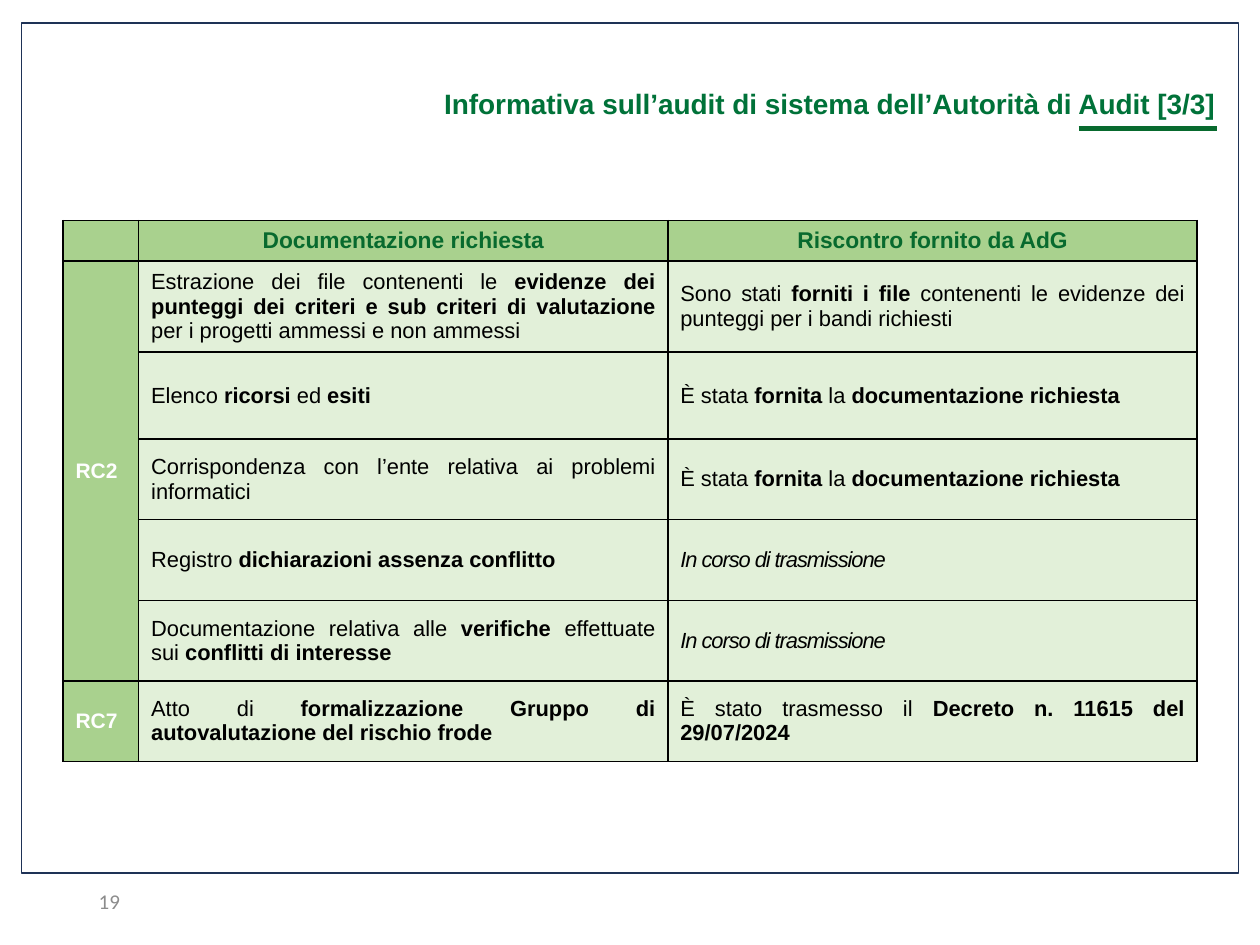
from lxml import etree
from pptx import Presentation
from pptx.dml.color import RGBColor
from pptx.enum import shapes, text
from pptx.oxml import ns
from pptx.util import Inches, Pt

GREEN = RGBColor(0x08, 0x6A, 0x2E)
TITLE_GREEN = RGBColor(0x00, 0x72, 0x39)
NAVY = RGBColor(0x1E, 0x32, 0x56)
GREY = RGBColor(0x8C, 0x8C, 0x8C)
HEAD_FILL = RGBColor(0xA9, 0xD1, 0x8E)
BODY_FILL = RGBColor(0xE2, 0xF0, 0xD9)
WHITE = RGBColor(0xFF, 0xFF, 0xFF)
BLACK = RGBColor(0x00, 0x00, 0x00)

HEADERS = ["Documentazione richiesta", "Riscontro fornito da AdG"]
PROVIDED = "È stata **fornita** la **documentazione richiesta**"
PENDING = "In corso di trasmissione"
# Code, request and reply; ** encloses bold words
ROWS = [
    ("RC2", "Estrazione dei file contenenti le **evidenze dei punteggi dei criteri "
            "e sub criteri di valutazione **per i progetti ammessi e non ammessi",
     "Sono stati **forniti i file **contenenti le evidenze dei punteggi per i bandi richiesti"),
    ("", "Elenco **ricorsi** ed **esiti**", PROVIDED),
    ("", "Corrispondenza con l’ente relativa ai problemi informatici", PROVIDED),
    ("", "Registro **dichiarazioni assenza conflitto**", PENDING),
    ("", "Documentazione relativa alle **verifiche** effettuate sui "
         "**conflitti di interesse**", PENDING),
    ("RC7", "Atto di **formalizzazione Gruppo di autovalutazione del rischio frode**",
     "È stato trasmesso il **Decreto n. 11615 del 29/07/2024**"),
]
COL_WIDTHS = [0.6, 4.2, 4.2]
ROW_HEIGHTS = [0.32, 0.69, 0.69, 0.64, 0.64, 0.64, 0.64]


def add_run(p, words, size, color, bold=False, name="Arial"):
    r = p.add_run()
    r.text = words
    r.font.name, r.font.size, r.font.bold = name, Pt(size), bold
    r.font.color.rgb = color
    return r


def add_frame(slide, left, top, width, height):
    """Navy page border with the short green rule under the title."""
    rule = slide.shapes.add_connector(
        shapes.MSO_CONNECTOR.STRAIGHT, left + Inches(8.39), top + Inches(0.84),
        left + Inches(9.49), top + Inches(0.84))
    rule.line.color.rgb, rule.line.width = GREEN, Pt(3)
    etree.SubElement(rule._element.spPr, ns.qn("a:effectLst"))
    sp = slide.shapes.add_shape(shapes.MSO_SHAPE.RECTANGLE, left, top, width, height)
    sp.shadow.inherit = False
    sp.fill.background()
    sp.line.color.rgb, sp.line.width = NAVY, Pt(1)


def add_title(slide, left, top, width, height):
    title = slide.shapes.title
    title.left, title.top, title.width, title.height = left, top, width, height
    tf = title.text_frame
    tf.vertical_anchor = text.MSO_ANCHOR.TOP
    tf.auto_size = text.MSO_AUTO_SIZE.SHAPE_TO_FIT_TEXT
    p = tf.paragraphs[0]
    p.alignment = text.PP_ALIGN.RIGHT
    add_run(p, "Informativa sull’audit di sistema dell’Autorità di Audit [3/3]",
            16, TITLE_GREEN, True)


def add_page_number(slide, left, top, width, height):
    tf = slide.shapes.add_textbox(left, top, width, height).text_frame
    tf.word_wrap = True
    tf.vertical_anchor = text.MSO_ANCHOR.MIDDLE
    p = tf.paragraphs[0]
    p.alignment = text.PP_ALIGN.RIGHT
    add_run(p, "19", 12, GREY, name="Calibri")


def style_cell(cell, fill):
    """Black borders, solid fill and middle anchor."""
    tc_pr = cell._tc.get_or_add_tcPr()
    for side in ("lnL", "lnR", "lnT", "lnB"):
        ln = etree.SubElement(tc_pr, ns.qn("a:" + side), w=str(Pt(1)))
        solid = etree.SubElement(ln, ns.qn("a:solidFill"))
        etree.SubElement(solid, ns.qn("a:srgbClr"), val=str(BLACK))
    cell.fill.solid()
    cell.fill.fore_color.rgb = fill
    cell.vertical_anchor = text.MSO_ANCHOR.MIDDLE


def write_body(cell, words):
    p = cell.text_frame.paragraphs[0]
    p.alignment = text.PP_ALIGN.JUSTIFY
    for i, part in enumerate(words.split("**")):
        if part:
            r = add_run(p, part, 12.5, BLACK, bold=i % 2 == 1)
            if words == PENDING:
                r.font.italic = True
                r._r.get_or_add_rPr().set("spc", "-60")
    return p


def add_audit_table(slide, left, top, width, height):
    frame = slide.shapes.add_table(len(ROW_HEIGHTS), len(COL_WIDTHS),
                                   left, top, width, height)
    table = frame.table
    for col, w in zip(table.columns, COL_WIDTHS):
        col.width = Inches(w)
    for row, h in zip(table.rows, ROW_HEIGHTS):
        row.height = Inches(h)
    for y in range(len(ROW_HEIGHTS)):
        for x in range(len(COL_WIDTHS)):
            style_cell(table.cell(y, x), HEAD_FILL if y == 0 or x == 0 else BODY_FILL)

    # The empty corner needs a small font to keep the header row low
    corner = table.cell(0, 0).text_frame.paragraphs[0]
    etree.SubElement(corner._p, ns.qn("a:endParaRPr"), sz="1200")
    for x, words in enumerate(HEADERS, 1):
        p = table.cell(0, x).text_frame.paragraphs[0]
        p.alignment = text.PP_ALIGN.CENTER
        add_run(p, words, 13, GREEN, True)

    table.cell(1, 0).merge(table.cell(5, 0))
    for y, (code, request, reply) in enumerate(ROWS, 1):
        if code:
            p = table.cell(y, 0).text_frame.paragraphs[0]
            p.alignment = text.PP_ALIGN.JUSTIFY
            add_run(p, code, 12, WHITE, True)
        write_body(table.cell(y, 1), request)
        p = write_body(table.cell(y, 2), reply)
        if code != "RC7":
            p.space_after = Pt(6)


def main():
    prs = Presentation()
    prs.slide_width, prs.slide_height = Inches(10), Inches(7.5)
    slide = prs.slides.add_slide(prs.slide_layouts[5])
    add_frame(slide, Inches(0.17), Inches(0.18), Inches(9.66), Inches(6.75))
    add_page_number(slide, Inches(-1.2), Inches(6.95), Inches(2.25), Inches(0.4))
    add_audit_table(slide, Inches(0.5), Inches(1.75), Inches(9), Inches(4.26))
    add_title(slide, Inches(2.02), Inches(0.64), Inches(7.73), Inches(0.37))
    prs.save("out.pptx")


if __name__ == "__main__":
    main()
